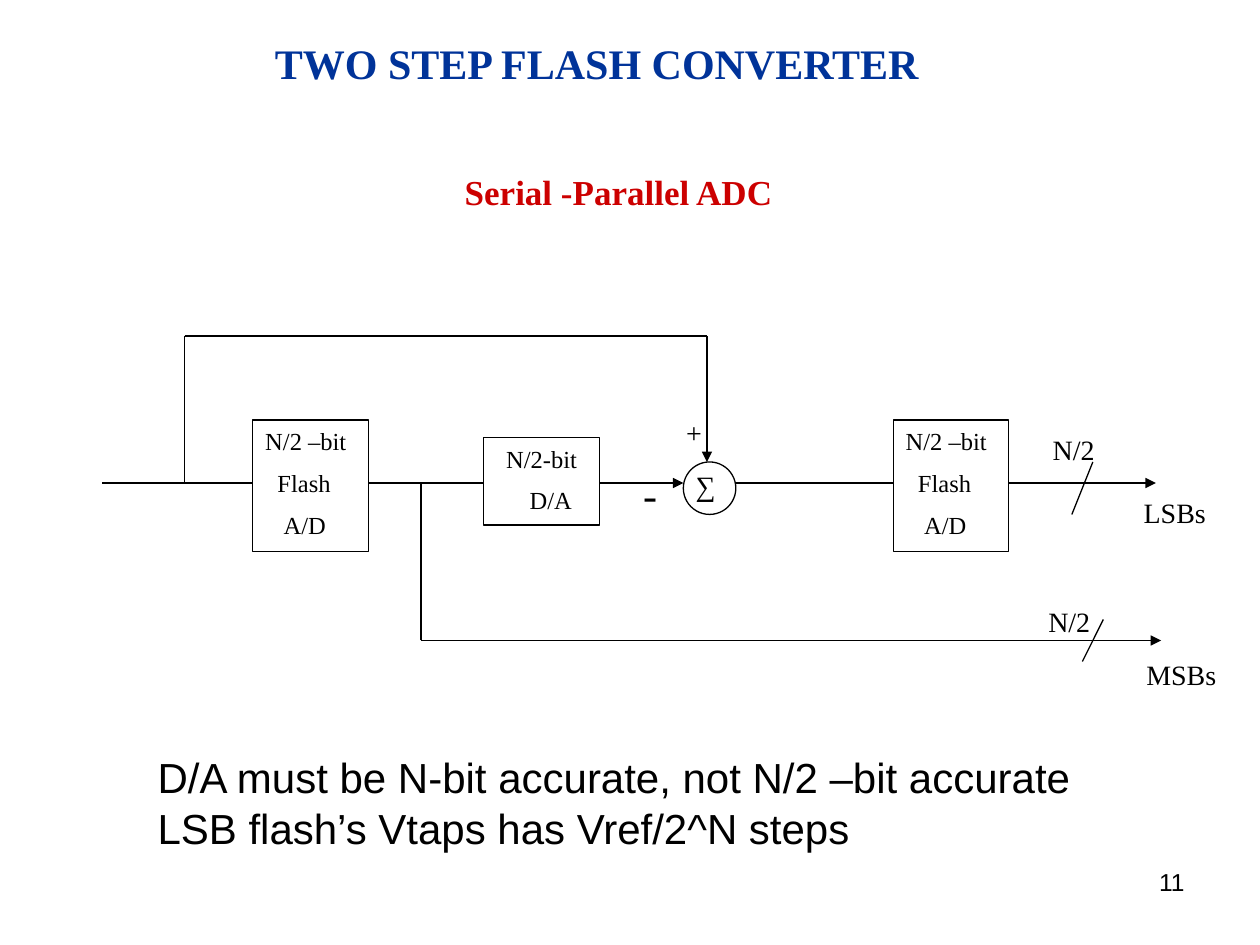
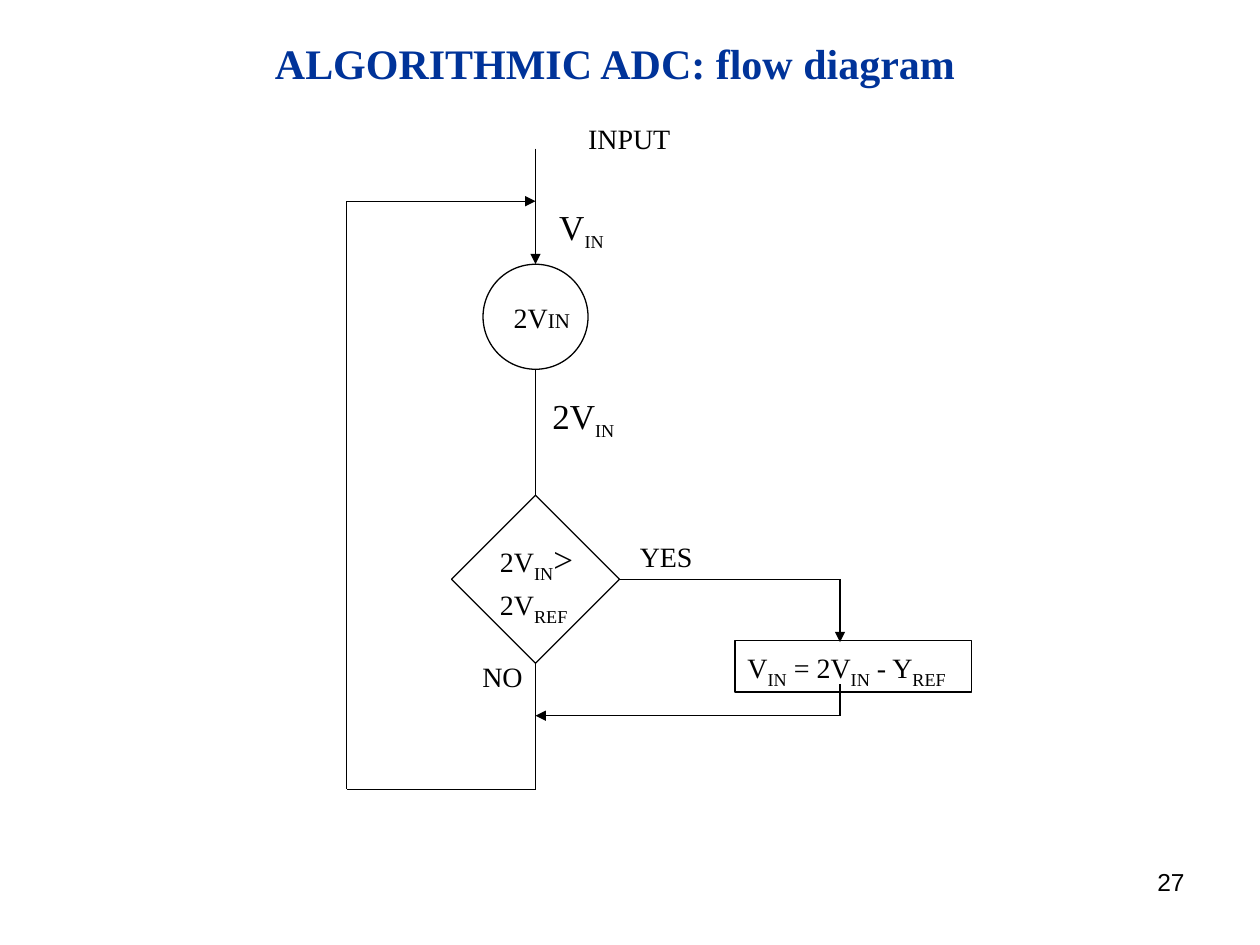
import pptx
import pptx.dml.color
import pptx.enum.shapes
import pptx.enum.text
import pptx.oxml
import pptx.util
from lxml import etree

Pt = pptx.util.Pt
SHAPES = pptx.enum.shapes.MSO_SHAPE
ALIGN = pptx.enum.text.PP_ALIGN
SERIF, SANS = "Times New Roman", "Arial"
BLACK, TITLE_BLUE, RED = "000000", "003399", "CC0000"
SPACE_WIDTH = 3.5
SUB = -25


def color(hex_value):
    return pptx.dml.color.RGBColor.from_string(hex_value)


def add_run(paragraph, text, size, font=SERIF, ink=BLACK, bold=False, baseline=0):
    run = paragraph.add_run()
    run.text = text
    run.font.size = Pt(size)
    run.font.name = font
    run.font.bold = bold
    run.font.color.rgb = color(ink)
    if baseline:
        run._r.get_or_add_rPr().set("baseline", str(baseline * 1000))


def fill_text(frame, lines, align=ALIGN.LEFT, wrap=True, grow=True, gap=0, indents=(), **style):
    frame.word_wrap = wrap
    frame.vertical_anchor = pptx.enum.text.MSO_ANCHOR.TOP
    sizes = pptx.enum.text.MSO_AUTO_SIZE
    frame.auto_size = sizes.SHAPE_TO_FIT_TEXT if grow else sizes.NONE
    for index, runs in enumerate(lines):
        paragraph = frame.add_paragraph() if index else frame.paragraphs[0]
        if indents:
            paragraph._p.get_or_add_pPr().set("marL", str(Pt(indents[index])))
        paragraph.alignment = align
        if index and gap:
            paragraph.space_before = Pt(gap)
        for text, size, *baseline in runs:
            add_run(paragraph, text, size, baseline=baseline[0] if baseline else 0, **style)


def add_text(slide, box, lines, **options):
    shape = slide.shapes.add_textbox(*map(Pt, box))
    fill_text(shape.text_frame, lines, **options)


def add_outline(slide, kind, box):
    shape = slide.shapes.add_shape(kind, *map(Pt, box))
    shape.shadow.inherit = False
    shape.fill.background()
    shape.line.color.rgb = color(BLACK)
    shape.line.width = Pt(0.75)
    return shape


def add_line(slide, start, end, arrow=False):
    connector = slide.shapes.add_connector(
        pptx.enum.shapes.MSO_CONNECTOR.STRAIGHT, *map(Pt, (*start, *end)))
    connector.line.color.rgb = color(BLACK)
    connector.line.width = Pt(0.75)
    if arrow:
        tail = etree.SubElement(connector.line._get_or_add_ln(), pptx.oxml.ns.qn("a:tailEnd"))
        tail.set("type", "triangle")
    etree.SubElement(connector._element.spPr, pptx.oxml.ns.qn("a:effectLst"))


def add_route(slide, origin, points, arrow=False):
    left, top = origin
    placed = [(left + x, top + y) for x, y in points]
    for index, (start, end) in enumerate(zip(placed, placed[1:])):
        add_line(slide, start, end, arrow and index == len(placed) - 2)


def add_labels(slide, origin, labels):
    left, top = origin
    for x, y, width, height, wrap, lines in labels:
        add_text(slide, (left + x, top + y, width, height), lines, wrap=wrap)


def add_frame(presentation, title, number, title_width, wrap):
    slide = presentation.slides.add_slide(presentation.slide_layouts[6])
    add_text(slide, (150, 18, title_width, 36.5), [[(title, 24)]],
             wrap=wrap, ink=TITLE_BLUE, bold=True)
    add_text(slide, (516, 492, 168, 37), [[(number, 14)]],
             align=ALIGN.RIGHT, grow=False, font=SANS)
    return slide


def draw_converter(slide, origin):
    left, top = origin
    axis, feed, branch, output = 84, 47, 182, 174
    sum_x, block_width = 345.5, 66
    adc_lines = ("N/2 –bit", "Flash", "A/D")
    blocks = [
        (86, 48, 75, adc_lines, (0, 2, 3), ALIGN.LEFT),
        (452, 48, 75, adc_lines, (0, 2, 3), ALIGN.LEFT),
        (218, 58, 50, ("N/2-bit", "D/A"), (0, 3), ALIGN.CENTER),
    ]
    for x, y, height, words, spaces, align in blocks:
        block = add_outline(slide, SHAPES.RECTANGLE, (left + x, top + y, block_width, height))
        fill_text(block.text_frame, [[(word, 14)] for word in words], grow=False, gap=7,
                  align=align, indents=[count * SPACE_WIDTH for count in spaces])
    add_outline(slide, SHAPES.OVAL, (left + 332, top + 72, 30, 30))

    for start, end, arrow in ((0, 86, False), (152, 218, False), (284, 332, True),
                              (362, 452, False), (518, 602, True)):
        add_route(slide, origin, [(start, axis), (end, axis)], arrow)
    add_route(slide, origin, [(feed, axis), (feed, 0), (sum_x, 0), (sum_x, 72)], True)
    add_route(slide, origin, [(branch, axis), (branch, output), (605, output)], True)
    for bus_slash in ([(566, 72), (554, 102)], [(572, 162), (560, 186)]):
        add_route(slide, origin, bus_slash)

    add_labels(slide, origin, [
        (x, y, width, 26.6, False, [[(text, 16)]]) for x, y, width, text in (
            (332, 72, 28, "∑"), (536, 51.4, 42, "N/2"), (533.5, 150, 42, "N/2"),
            (588, 87.4, 52, "LSBs"), (589.5, 180, 58, "MSBs"), (326.5, 42, 26, "+"))])
    add_labels(slide, origin, [(302, 72, 25, 36, True, [[("-", 24)]])])


def draw_flow(slide, origin):
    left, top = origin
    axis, loop_top, loop_bottom = 108, 49, 385
    yes_x, yes_y, merge_y = 282, 265, 343
    add_outline(slide, SHAPES.OVAL, (left + 78, top + 85, 60, 60))
    add_outline(slide, SHAPES.DIAMOND, (left + 60, top + 217, 96, 96))
    update = add_outline(slide, SHAPES.RECTANGLE, (left + 222, top + 300, 135, 29.5))
    fill_text(update.text_frame, [[("V", 16), ("IN", 18, SUB), (" = 2V", 16), ("IN", 18, SUB),
                                   (" - Y", 16), ("REF", 18, SUB)]], grow=False)

    add_route(slide, origin, [(axis, 145), (axis, 217)])
    add_route(slide, origin, [(axis, 19), (axis, 85)], True)
    add_route(slide, origin, [(axis, 313), (axis, loop_bottom), (0, loop_bottom),
                              (0, loop_top), (axis, loop_top)], True)
    add_route(slide, origin, [(156, yes_y), (yes_x, yes_y), (yes_x, 301)], True)
    add_route(slide, origin, [(yes_x, 325), (yes_x, merge_y), (axis, merge_y)], True)

    add_labels(slide, origin, [
        (131, 0, 66, 26.6, False, [[("INPUT", 16)]]),
        (88.5, 102, 50, 26.6, False, [[("2V", 16), ("IN", 12)]]),
        (110.5, 156, 54, 31, True, [[("2V", 20), ("IN", 18, SUB)]]),
        (80.6, 237.5, 60, 52.6, True, [[("2V", 16), ("IN", 18, SUB), (">", 20)],
                                       [("2V", 16), ("REF", 18, SUB)]]),
        (114.5, 48, 44, 31, False, [[("V", 20), ("IN", 18, SUB)]]),
        (70.5, 307.5, 40, 26.6, False, [[("NO", 16)]]),
        (160.5, 238.5, 48, 26.6, False, [[("YES", 16)]]),
    ])


def main():
    presentation = pptx.Presentation()
    presentation.slide_width, presentation.slide_height = Pt(720), Pt(540)

    slide = add_frame(presentation, "TWO STEP FLASH CONVERTER", "11", 446, True)
    draw_converter(slide, (58.5, 192))
    add_text(slide, (258, 94, 191, 31), [[("Serial -Parallel ADC", 20)]],
             align=ALIGN.CENTER, wrap=False, ink=RED, bold=True)
    add_text(slide, (83, 426, 541, 65.5),
             [[("D/A must be N-bit accurate, not N/2 –bit accurate", 24)],
              [("LSB flash’s Vtaps has Vref/2^N steps", 24)]], wrap=False, font=SANS)

    slide = add_frame(presentation, "ALGORITHMIC ADC: flow diagram", "27", 408, False)
    draw_flow(slide, (198, 66))

    presentation.save("out.pptx")


if __name__ == "__main__":
    main()
